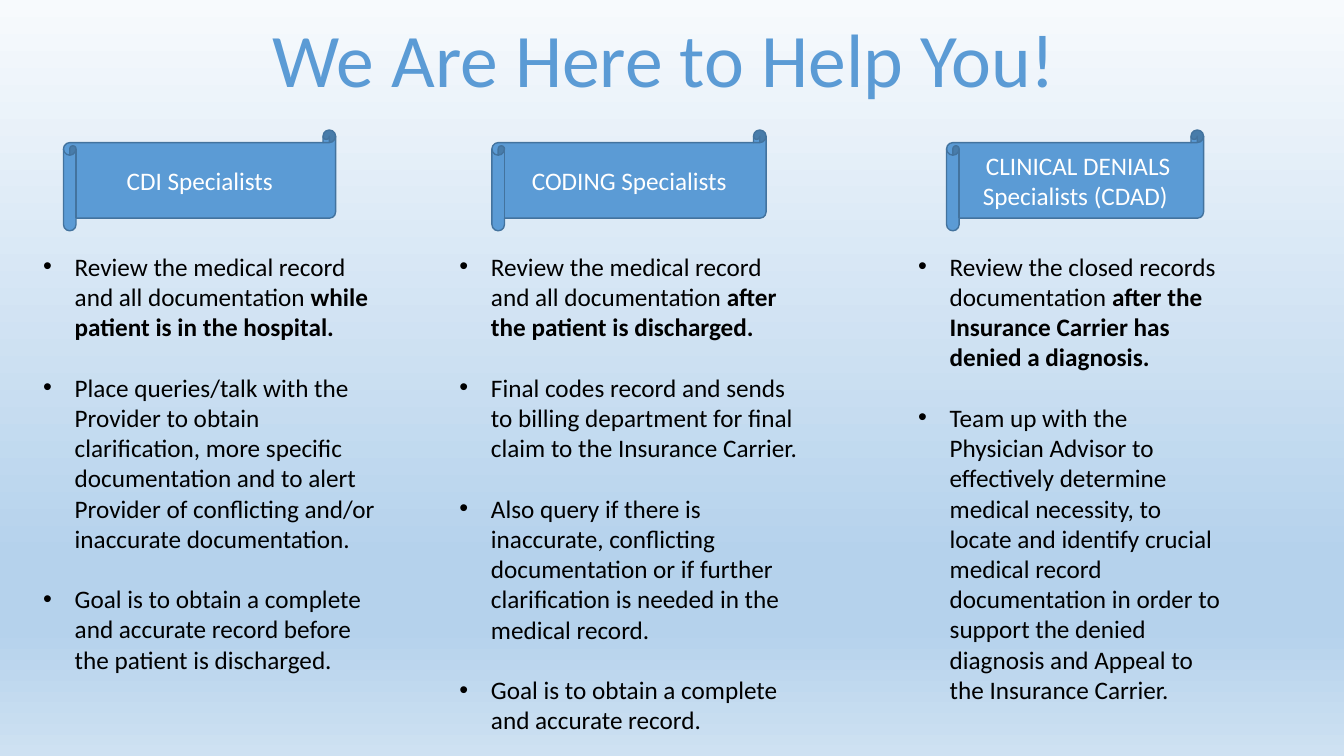
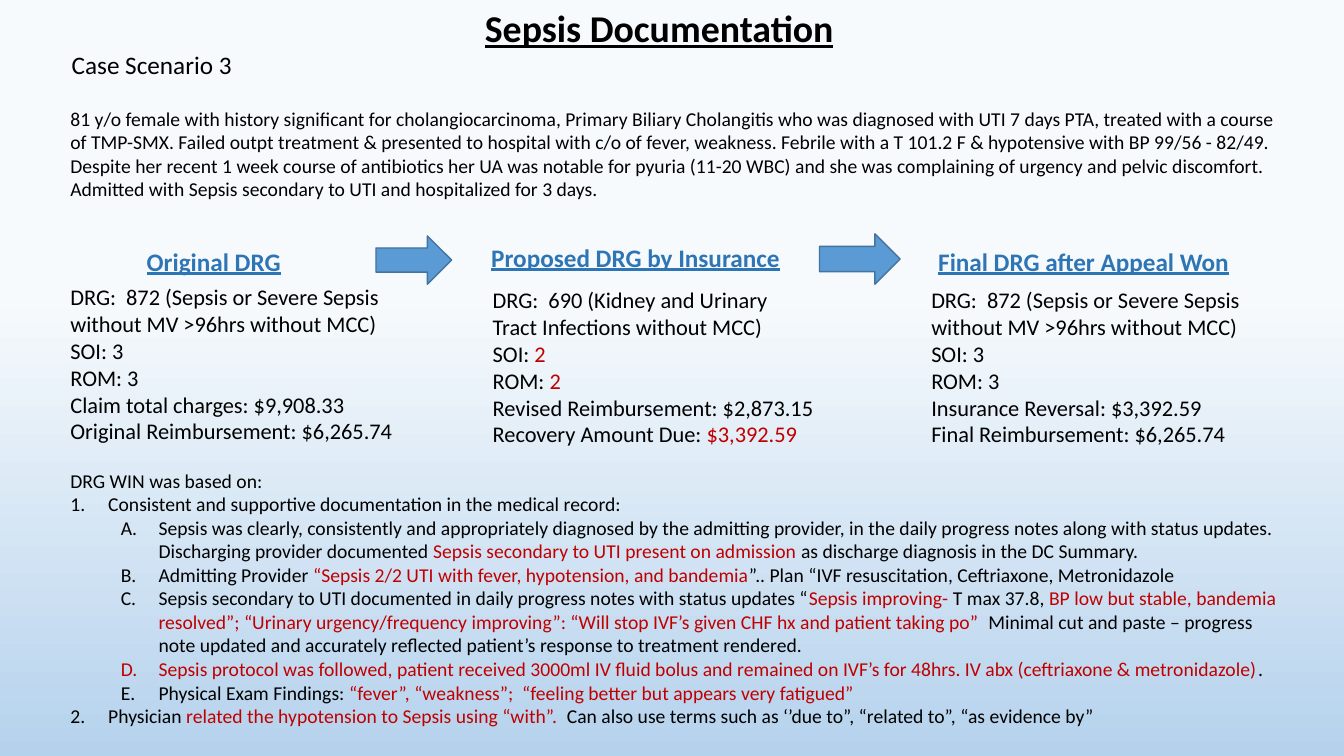
from dataclasses import dataclass

from lxml import etree
from pptx import Presentation
from pptx import util as u
from pptx.dml.color import RGBColor
from pptx.enum import shapes, text
from pptx.oxml import ns

COLORS = {
    "black": "000000",
    "white": "FFFFFF",
    "blue": "5B9BD5",
    "outline": "43739E",
    "heading": "2E75B6",
    "red": "C00000",
    "sky_pale": "F7FAFD",
    "sky_deep": "B5D2EC",
    "sky_soft": "CEE1F2",
}
FONT = "Calibri"
GRID = u.Inches(0.1)  # one column or row
COLUMNS, ROWS = 133.33, 75
TITLE_ONLY = 5
BULLET_GAP = 21.6  # one line of 18 point text


@dataclass(frozen=True)
class Box:
    """A place on the grid, in columns and rows."""
    left: float
    top: float
    width: float
    height: float

    def emu(self) -> list[int]:
        return [round(n * GRID) for n in (self.left, self.top, self.width, self.height)]


@dataclass(frozen=True)
class Style:
    size: float
    color: str = "black"
    bold: bool = False
    underline: bool = False
    centered: bool = False


@dataclass(frozen=True)
class Run:
    text: str
    color: str | None = None
    bold: bool = False


@dataclass(frozen=True)
class Marker:
    """A bullet or number; indent and hang are in columns."""
    tag: str
    attribute: str
    value: str
    font: str
    level: int
    indent: float
    hang: float


@dataclass(frozen=True)
class Line:
    runs: tuple[Run, ...]
    marker: Marker | None = None
    space_before: float = 0


@dataclass(frozen=True)
class Team:
    scroll: Box
    name: tuple[str, ...]
    duties_box: Box
    duties: tuple[tuple[Run, ...], ...]


@dataclass(frozen=True)
class DrgCase:
    heading_box: Box
    heading: str
    details_box: Box
    details: tuple[tuple[Run, ...], ...]


BULLET = Marker("a:buChar", "char", "•", "Arial", 0, 3.13, 3.13)
NUMBER = Marker("a:buAutoNum", "type", "arabicPeriod", "+mj-lt", 0, 3.75, 3.75)
LETTER = Marker("a:buAutoNum", "type", "alphaUcPeriod", "+mj-lt", 1, 8.75, 3.75)

BODY = Style(18)
SMALL = Style(14)
DETAIL = Style(16)
SCROLL = Style(18, "white", centered=True)
CASE_LABEL = Style(18, centered=True)
DRG_HEADING = Style(18, "heading", bold=True, underline=True, centered=True)
HELP_TITLE = Style(54, "blue", centered=True)
SEPSIS_TITLE = Style(27, bold=True, underline=True, centered=True)


def plain(words: str) -> Run:
    return Run(words)


def red(words: str) -> Run:
    return Run(words, "red")


def strong(words: str) -> Run:
    return Run(words, bold=True)


def plain_lines(*words: str) -> list[Line]:
    return [Line((plain(line),)) for line in words]


def rgb(name: str) -> RGBColor:
    return RGBColor.from_string(COLORS[name])


def set_background(slide, stops: list[tuple[int, str]]) -> None:
    """Fill the slide from top to bottom; stops are (percent, colour)."""
    fill = slide.background.fill
    fill.gradient()
    gradient = slide.background._cSld.find(".//" + ns.qn("a:gradFill"))
    stop_list = gradient.find(ns.qn("a:gsLst"))
    for old_stop in list(stop_list):
        stop_list.remove(old_stop)
    for percent, color in stops:
        stop = etree.SubElement(stop_list, ns.qn("a:gs"), pos=str(percent * 1000))
        etree.SubElement(stop, ns.qn("a:srgbClr"), val=COLORS[color])
    gradient.find(ns.qn("a:lin")).set("ang", "5400000")


def set_marker(paragraph, marker: Marker) -> None:
    paragraph.level = marker.level
    properties = paragraph._p.get_or_add_pPr()
    properties.set("marL", str(round(marker.indent * GRID)))
    properties.set("indent", str(round(-marker.hang * GRID)))
    etree.SubElement(properties, ns.qn("a:buFont"), typeface=marker.font)
    etree.SubElement(properties, ns.qn(marker.tag), {marker.attribute: marker.value})


def write(frame, lines: list[Line], style: Style, wrap: bool = True) -> None:
    frame.word_wrap = wrap
    frame.auto_size = text.MSO_AUTO_SIZE.NONE
    for index, line in enumerate(lines):
        paragraph = frame.paragraphs[0] if index == 0 else frame.add_paragraph()
        paragraph.alignment = text.PP_ALIGN.CENTER if style.centered else text.PP_ALIGN.LEFT
        paragraph.space_before = u.Pt(line.space_before)
        if line.marker:
            set_marker(paragraph, line.marker)
        for part in line.runs:
            run = paragraph.add_run()
            run.text = part.text
            run.font.name = FONT
            run.font.size = u.Pt(style.size)
            run.font.bold = style.bold or part.bold
            run.font.underline = style.underline
            run.font.color.rgb = rgb(part.color or style.color)


def add_text(slide, box: Box, lines: list[Line], style: Style, wrap: bool = True) -> None:
    write(slide.shapes.add_textbox(*box.emu()).text_frame, lines, style, wrap)


def add_blue_shape(slide, kind: shapes.MSO_SHAPE, box: Box):
    shape = slide.shapes.add_shape(kind, *box.emu())
    shape.shadow.inherit = False
    shape.fill.solid()
    shape.fill.fore_color.rgb = rgb("blue")
    shape.line.color.rgb = rgb("outline")
    shape.line.width = u.Pt(1)
    return shape


def add_titled_slide(presentation, title: str, box: Box, style: Style,
                     stops: list[tuple[int, str]]):
    slide = presentation.slides.add_slide(presentation.slide_layouts[TITLE_ONLY])
    set_background(slide, stops)
    placeholder = slide.shapes.title
    placeholder.left, placeholder.top, placeholder.width, placeholder.height = box.emu()
    placeholder.text_frame.vertical_anchor = text.MSO_ANCHOR.TOP
    write(placeholder.text_frame, plain_lines(title), style, wrap=False)
    return slide


TEAMS = (
    Team(Box(6.3, 12.9, 27, 10), ("CDI Specialists ",), Box(3.3, 24.4, 35.5, 43.4), (
        (plain("Review the medical record and all documentation "),
         strong("while patient is in the hospital.")),
        (plain("Place queries/talk with the Provider to obtain clarification, more specific "
               "documentation and to alert Provider of conflicting and/or inaccurate "
               "documentation."),),
        (plain("Goal is to obtain a complete and accurate record before the patient is "
               "discharged."),),
    )),
    Team(Box(48.8, 12.9, 27.2, 10), ("CODING Specialists ",), Box(44.6, 24.4, 36.3, 49.5), (
        (plain("Review the medical record and all documentation "),
         strong("after the patient is discharged.")),
        (plain("Final codes record and sends to billing department for final claim to the "
               "Insurance Carrier."),),
        (plain("Also query if there is inaccurate, conflicting documentation or if further "
               "clarification is needed in the medical record."),),
        (plain("Goal is to obtain a complete and accurate record."),),
    )),
    Team(Box(93.9, 12.9, 25.5, 10), ("CLINICAL DENIALS", "Specialists (CDAD) "),
         Box(90.1, 24.4, 32.1, 46.4), (
        (plain("Review the closed records documentation "),
         strong("after the Insurance Carrier has denied a diagnosis.")),
        (plain("Team up with the Physician Advisor to effectively determine medical necessity, "
               "to locate and identify crucial medical record documentation in order to support "
               "the denied diagnosis and Appeal to the Insurance Carrier."),),
    )),
)

SEPSIS_DRG = (
    (plain("DRG:  872 (Sepsis or Severe Sepsis"),),
    (plain("without MV >96hrs without MCC)"),),
    (plain("SOI: 3"),),
    (plain("ROM: 3"),),
)
DRG_CASES = (
    DrgCase(Box(13.5, 23.9, 15.4, 4), "Original DRG", Box(6, 27.6, 34.2, 17.2), SEPSIS_DRG + (
        (plain("Claim total charges: $9,908.33"),),
        (plain("Original Reimbursement: $6,265.74"),),
    )),
    DrgCase(Box(47.6, 23.5, 30.9, 4), "Proposed DRG by Insurance", Box(47.9, 27.9, 35, 17.2), (
        (plain("DRG:  690 (Kidney and Urinary"),),
        (plain("Tract Infections without MCC)"),),
        (plain("SOI: "), red("2")),
        (plain("ROM: "), red("2")),
        (plain("Revised Reimbursement: $2,873.15"),),
        (plain("Recovery Amount Due: "), red("$3,392.59")),
    )),
    DrgCase(Box(91.9, 23.9, 31.2, 4), "Final DRG after Appeal Won", Box(91.4, 27.9, 40.2, 17.2),
            SEPSIS_DRG + (
        (plain("Insurance Reversal: $3,392.59"),),
        (plain("Final Reimbursement: $6,265.74"),),
    )),
)
ARROWS = (Box(37.3, 23.4, 7.5, 4.8), Box(81.3, 23.2, 8, 5))

HISTORY = (
    "81 y/o female with history significant for cholangiocarcinoma, Primary Biliary Cholangitis "
    "who was diagnosed with UTI 7 days PTA, treated with a course of TMP-SMX. Failed outpt "
    "treatment & presented to hospital with c/o of fever, weakness. Febrile with a T 101.2 F & "
    "hypotensive with BP 99/56 - 82/49. Despite her recent 1 week course of antibiotics her UA "
    "was notable for pyuria (11-20 WBC) and she was complaining of urgency and pelvic "
    "discomfort.  Admitted with Sepsis secondary to UTI and hospitalized for 3 days."
)
WIN_REASONS = [
    Line((plain("DRG WIN was based on:"),)),
    Line((plain("Consistent and supportive documentation in the medical record:"),), NUMBER),
    Line((plain("Sepsis was clearly, consistently and appropriately diagnosed by the admitting "
                "provider, in the daily progress notes along with status updates. Discharging "
                "provider documented "),
          red("Sepsis secondary to UTI present on admission "),
          plain("as discharge diagnosis in the DC Summary.")), LETTER),
    Line((plain("Admitting Provider "),
          red("“Sepsis 2/2 UTI with fever, hypotension, and bandemia"),
          plain("”.. Plan “IVF resuscitation, Ceftriaxone, Metronidazole")), LETTER),
    Line((plain("Sepsis secondary to UTI documented in daily progress notes with status updates “"),
          red("Sepsis improving- "),
          plain("T max 37.8, "),
          red("BP low but stable, bandemia resolved”; “Urinary urgency/frequency improving”: "
              "“Will stop IVF’s given CHF hx and patient taking po”  "),
          plain("Minimal cut and paste – progress note updated and accurately reflected "
                "patient’s response to treatment rendered.")), LETTER),
    Line((red("Sepsis protocol was followed, patient received 3000ml IV fluid bolus and remained "
              "on IVF’s for 48hrs. IV abx (ceftriaxone & metronidazole)"),
          plain(".")), LETTER),
    Line((plain("Physical Exam Findings: "),
          red("“fever”, “weakness”;  “feeling better but appears very fatigued”")), LETTER),
    Line((plain("Physician "),
          red("related the hypotension to Sepsis using “with”.  "),
          plain("Can also use terms such as ‘’due to”, “related to”, “as evidence by”")), NUMBER),
]


def build_help_slide(presentation) -> None:
    stops = [(0, "sky_pale"), (74, "sky_deep"), (83, "sky_deep"), (100, "sky_soft")]
    slide = add_titled_slide(presentation, "We Are Here to Help You!",
                             Box(25.6, 0.7, 80.6, 10.1), HELP_TITLE, stops)
    for team in TEAMS:
        scroll = add_blue_shape(slide, shapes.MSO_SHAPE.HORIZONTAL_SCROLL, team.scroll)
        scroll.text_frame.vertical_anchor = text.MSO_ANCHOR.MIDDLE
        write(scroll.text_frame, plain_lines(*team.name), SCROLL)
        duties = [Line(runs, BULLET, BULLET_GAP if index else 0)
                  for index, runs in enumerate(team.duties)]
        add_text(slide, team.duties_box, duties, BODY)


def build_sepsis_slide(presentation) -> None:
    stops = [(39, "sky_pale"), (100, "sky_deep")]
    slide = add_titled_slide(presentation, "Sepsis Documentation",
                             Box(46.9, 0, 37, 5.6), SEPSIS_TITLE, stops)
    add_text(slide, Box(6, 4.4, 18.1, 4), plain_lines("Case Scenario 3"), CASE_LABEL, wrap=False)
    add_text(slide, Box(6, 10.1, 122, 10.4), plain_lines(HISTORY), SMALL)
    for case in DRG_CASES:
        add_text(slide, case.heading_box, plain_lines(case.heading), DRG_HEADING, wrap=False)
        add_text(slide, case.details_box, [Line(runs) for runs in case.details], DETAIL)
    for arrow in ARROWS:
        add_blue_shape(slide, shapes.MSO_SHAPE.RIGHT_ARROW, arrow)
    add_text(slide, Box(6, 46, 123.3, 26.9), WIN_REASONS, SMALL)


def main() -> None:
    presentation = Presentation()
    presentation.slide_width = round(COLUMNS * GRID)
    presentation.slide_height = ROWS * GRID
    build_help_slide(presentation)
    build_sepsis_slide(presentation)
    presentation.save("out.pptx")


if __name__ == "__main__":
    main()
